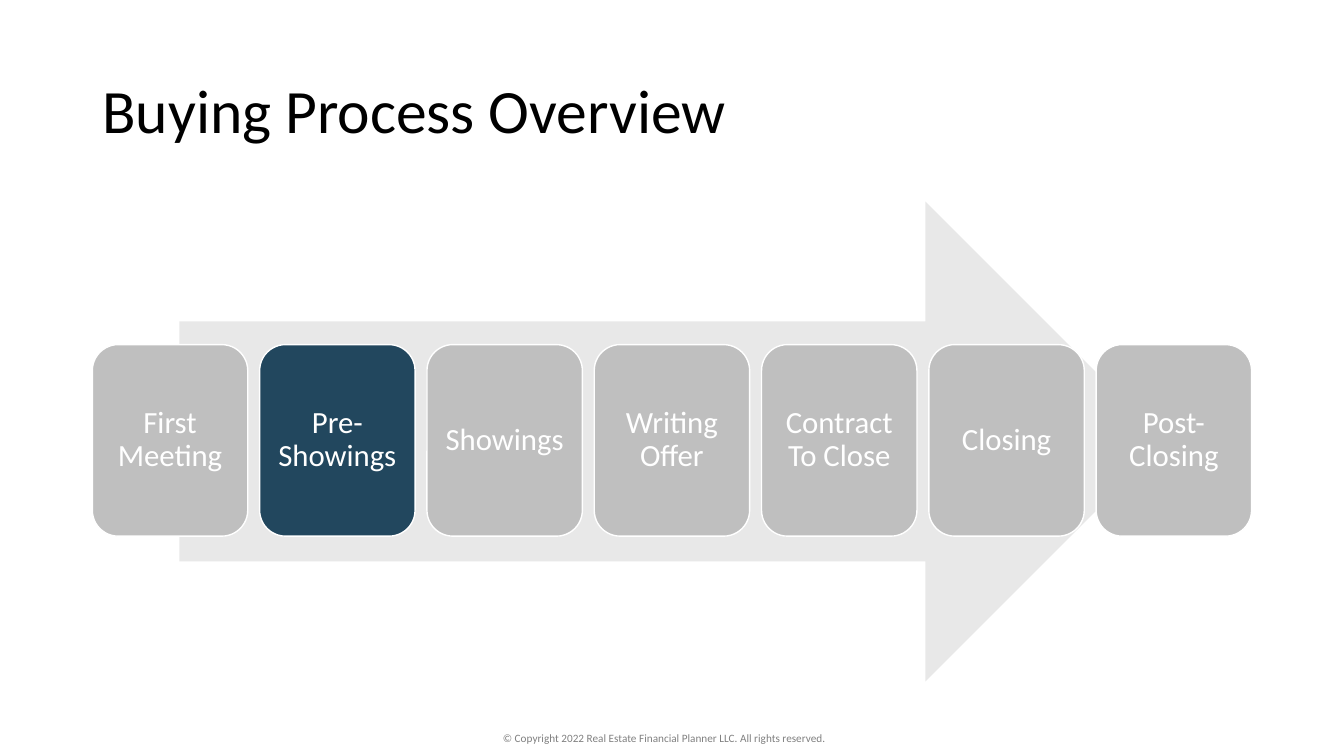
"""Build the buying process overview slide."""
from dataclasses import dataclass

import pptx
import pptx.dml.color
import pptx.enum.shapes
import pptx.enum.text
import pptx.util

Pt = pptx.util.Pt
Shapes = pptx.enum.shapes.MSO_SHAPE
Align = pptx.enum.text.PP_ALIGN
Anchor = pptx.enum.text.MSO_ANCHOR

FONT = "Calibri"
COLOURS = {
    "title": "000000",
    "copyright": "808080",
    "arrow": "E8E8E8",
    "step": "BFBFBF",
    "current": "22475E",
    "white": "FFFFFF",
}
STEP_LEFT, STEP_TOP, STEP_PITCH = 66, 246.2, 119.5
STEP_WIDTH, STEP_HEIGHT, STEP_INSET = 111, 136.8, 6.6


@dataclass
class Step:
    """A stage of the buying process."""

    label: str
    colour: str = "step"


STEPS = [
    Step("First Meeting"),
    Step("Pre-Showings", "current"),
    Step("Showings"),
    Step("Writing Offer"),
    Step("Contract To Close"),
    Step("Closing"),
    Step("Post-Closing"),
]


def rgb(name: str) -> pptx.dml.color.RGBColor:
    """Look up a colour by name."""
    return pptx.dml.color.RGBColor.from_string(COLOURS[name])


def write(box, text: str, size: float, colour: str, align=Align.LEFT, spacing: float = 1.0) -> None:
    """Put one formatted paragraph in a box."""
    frame = box.text_frame
    frame.word_wrap = True
    frame.text = text
    para = frame.paragraphs[0]
    para.alignment = align
    para.line_spacing = spacing
    para.font.name = FONT
    para.font.size = Pt(size)
    para.font.color.rgb = rgb(colour)


def add_title(page) -> None:
    """Place and format the title."""
    title = page.shapes.title
    title.left, title.top, title.width, title.height = Pt(66), Pt(28.8), Pt(828), Pt(104.4)
    write(title, "Buying Process Overview", 44, "title", spacing=0.9)
    title.text_frame.auto_size = pptx.enum.text.MSO_AUTO_SIZE.NONE
    title.text_frame.vertical_anchor = Anchor.MIDDLE


def add_copyright(page) -> None:
    """Add the copyright line at the foot."""
    box = page.shapes.add_textbox(Pt(352.1), Pt(519.1), Pt(255.6), Pt(17.3))
    write(
        box,
        "© Copyright 2022 Real Estate Financial Planner LLC. All rights reserved.",
        8,
        "copyright",
    )


def add_arrow(page) -> None:
    """Add the wide arrow behind the steps."""
    arrow = page.shapes.add_shape(Shapes.RIGHT_ARROW, Pt(128.2), Pt(144), Pt(704.2), Pt(342.7))
    arrow.shadow.inherit = False
    arrow.fill.solid()
    arrow.fill.fore_color.rgb = rgb("arrow")
    arrow.line.fill.background()


def add_step(page, index: int, step: Step) -> None:
    """Add one rounded step box at its place in the row."""
    box = page.shapes.add_shape(
        Shapes.ROUNDED_RECTANGLE,
        Pt(STEP_LEFT + index * STEP_PITCH),
        Pt(STEP_TOP),
        Pt(STEP_WIDTH),
        Pt(STEP_HEIGHT),
    )
    box.shadow.inherit = False
    box.fill.solid()
    box.fill.fore_color.rgb = rgb(step.colour)
    box.line.color.rgb = rgb("white")
    box.line.width = Pt(1)
    frame = box.text_frame
    frame.margin_left = frame.margin_right = Pt(STEP_INSET)
    frame.margin_top = frame.margin_bottom = Pt(STEP_INSET)
    frame.vertical_anchor = Anchor.MIDDLE
    write(box, step.label, 22, "white", Align.CENTER, 0.9)


def main() -> None:
    """Build and save the deck."""
    deck = pptx.Presentation()
    deck.slide_width, deck.slide_height = Pt(960), Pt(540)
    page = deck.slides.add_slide(deck.slide_layouts.get_by_name("Title Only"))
    add_title(page)
    add_copyright(page)
    add_arrow(page)
    for index, step in enumerate(STEPS):
        add_step(page, index, step)
    deck.save("out.pptx")


if __name__ == "__main__":
    main()
